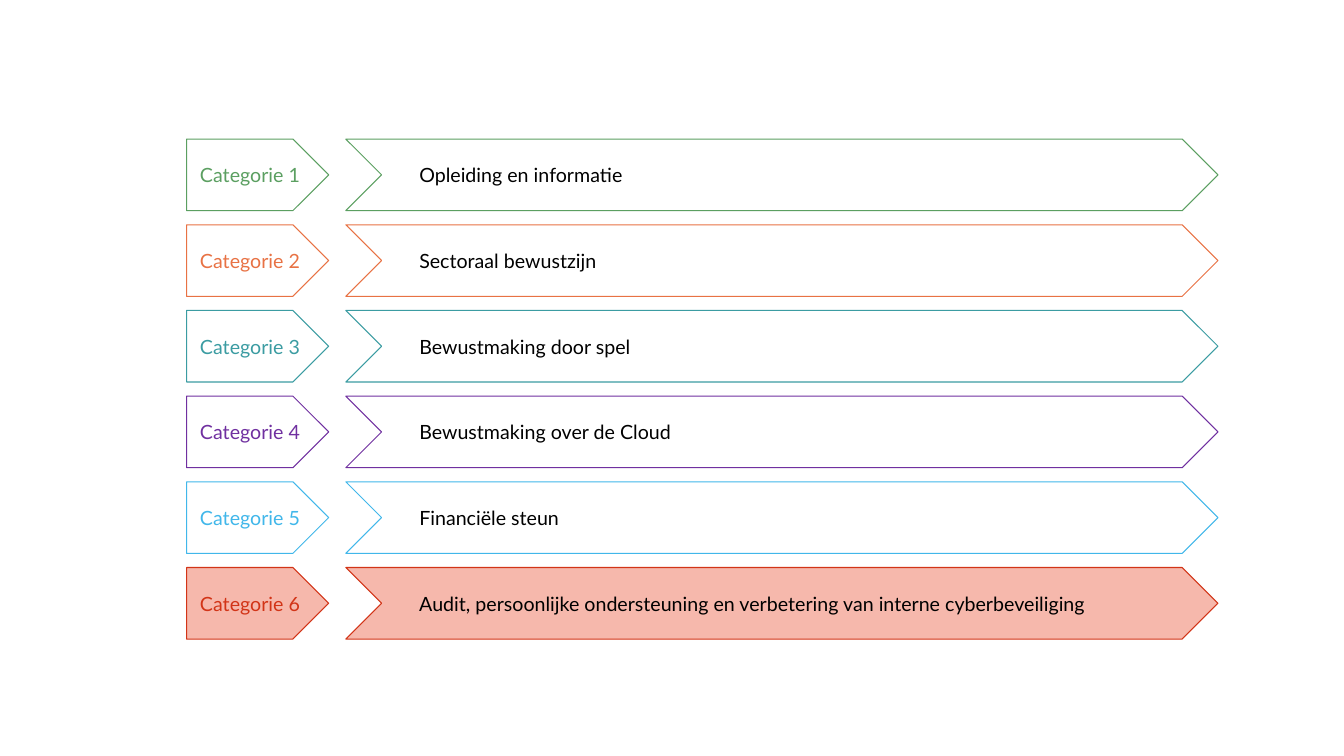
"""Build a slide with six cybersecurity categories as rows of arrow shapes."""
import pptx
import pptx.dml.color
import pptx.enum.shapes
import pptx.enum.text
import pptx.util

RGB = pptx.dml.color.RGBColor
SHAPE = pptx.enum.shapes.MSO_SHAPE
ALIGN = pptx.enum.text.PP_ALIGN
PX = 9144

GREEN = RGB(0x5B, 0x9F, 0x61)
ORANGE = RGB(0xE8, 0x72, 0x44)
TEAL = RGB(0x3B, 0x9C, 0xA2)
PURPLE = RGB(0x70, 0x30, 0xA0)
BLUE = RGB(0x41, 0xB7, 0xEA)
RED = RGB(0xD2, 0x34, 0x17)
PINK = RGB(0xF6, 0xB8, 0xAC)
BLACK = RGB(0x00, 0x00, 0x00)

FIRST_TOP, ROW_PITCH, ARROW_HEIGHT = 138, 85, 71
TEXT_OFFSET, TEXT_HEIGHT = 19, 34

categories = [
    ("Opleiding en informatie", GREEN, None, 548),
    ("Sectoraal bewustzijn", ORANGE, None, 548),
    ("Bewustmaking door spel", TEAL, None, 548),
    ("Bewustmaking over de Cloud", PURPLE, None, 548),
    ("Financiële steun", BLUE, None, 548),
    ("Audit, persoonlijke ondersteuning en verbetering van interne cyberbeveiliging",
     RED, PINK, 760),
]

presentation = pptx.Presentation()
presentation.slide_width = 1333 * PX
presentation.slide_height = 750 * PX
slide = presentation.slides.add_slide(presentation.slide_layouts[6])


def add_arrow(preset, left, top, width, outline, fill):
    arrow = slide.shapes.add_shape(
        preset, left * PX, top * PX, width * PX, ARROW_HEIGHT * PX)
    arrow.shadow.inherit = False
    if fill is None:
        arrow.fill.background()
    else:
        arrow.fill.solid()
        arrow.fill.fore_color.rgb = fill
    arrow.line.color.rgb = outline
    arrow.line.width = pptx.util.Pt(0.75)


def add_text(wording, left, top, width, color, alignment):
    frame = slide.shapes.add_textbox(
        left * PX, top * PX, width * PX, TEXT_HEIGHT * PX).text_frame
    frame.word_wrap = True
    frame.auto_size = pptx.enum.text.MSO_AUTO_SIZE.SHAPE_TO_FIT_TEXT
    paragraph = frame.paragraphs[0]
    paragraph.text = wording
    paragraph.alignment = alignment
    paragraph.font.name = "Lato"
    paragraph.font.size = pptx.util.Pt(14)
    paragraph.font.color.rgb = color


for row, (description, color, fill, description_width) in enumerate(categories):
    top = FIRST_TOP + row * ROW_PITCH
    add_arrow(SHAPE.PENTAGON, 185, top, 141, color, fill)
    add_arrow(SHAPE.CHEVRON, 343, top, 865, color, fill)
    add_text(f"Categorie {row + 1}", 121, top + TEXT_OFFSET, 254, color, ALIGN.CENTER)
    add_text(description, 406, top + TEXT_OFFSET, description_width, BLACK, ALIGN.LEFT)

presentation.save("out.pptx")
